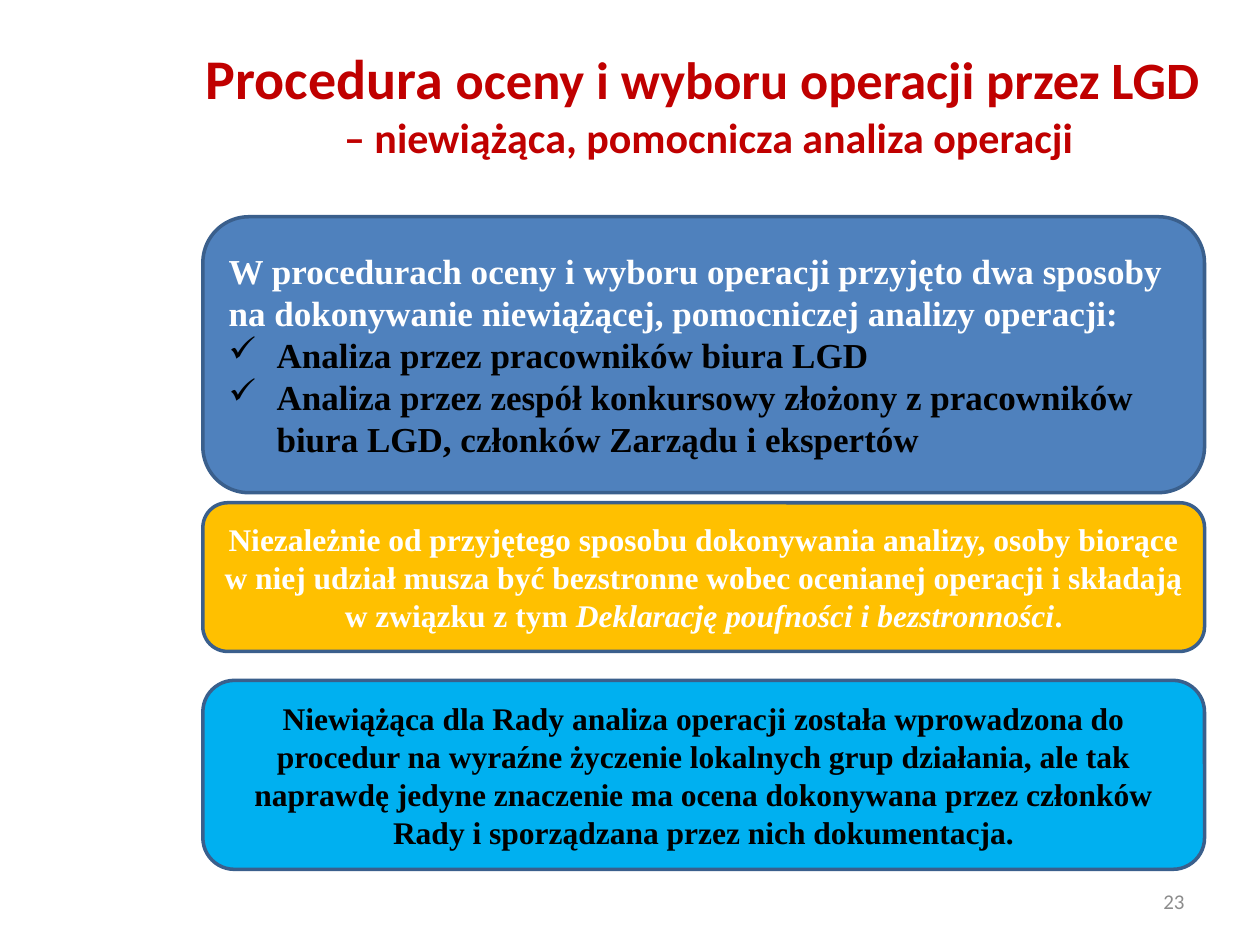
"""Build the slide on the non-binding, auxiliary analysis of operations."""
from lxml import etree
from pptx import Presentation
from pptx import util as u
from pptx.dml.color import RGBColor
from pptx.enum import shapes, text
from pptx.oxml.ns import qn


def rgb(value):
    return RGBColor.from_string(value)


def add_text(p, content, size=18, font="Times New Roman", color="000000",
             bold=True, italic=False, align=text.PP_ALIGN.CENTER, bullet=None):
    p.alignment = align
    if bullet:
        pPr = p._p.get_or_add_pPr()
        pPr.set("marL", str(u.Inches(0.38)))
        pPr.set("indent", str(u.Inches(-0.38)))
        etree.SubElement(pPr, qn("a:buChar")).set("char", bullet)
    r = p.add_run()
    r.text = content
    r.font.size = u.Pt(size)
    r.font.name = font
    r.font.bold = bold
    r.font.italic = italic
    r.font.color.rgb = rgb(color)


prs = Presentation()
prs.slide_width, prs.slide_height = u.Inches(10), u.Inches(7.5)
s = prs.slides.add_slide(prs.slide_layouts[6])

frames = []
for box in [(1.33, 0.08, 8.59, 1.47), (7.17, 6.95, 2.33, 0.4)]:
    tf = s.shapes.add_textbox(*map(u.Inches, box)).text_frame
    tf.word_wrap = True
    tf.vertical_anchor = text.MSO_ANCHOR.MIDDLE
    frames.append(tf)
title, number = frames

p = title.paragraphs[0]
heading = {"font": "Calibri", "color": "C00000"}
add_text(p, "Procedura ", size=32, **heading)
add_text(p, "oceny i wyboru operacji przez LGD ", size=30, **heading)
p.add_line_break()
add_text(p, "– niewiążąca, pomocnicza analiza operacji", size=24, **heading)

add_text(number.paragraphs[0], "23", size=12, font="Calibri", color="8C8C8C",
         bold=False, align=text.PP_ALIGN.RIGHT)

white = {"color": "FFFFFF"}
left = {"size": 20, "align": text.PP_ALIGN.LEFT}
check = {**left, "bullet": "✓"}
panels = [
    (1.72, 2.19, "4F81BD", [
        [("W procedurach oceny i wyboru operacji przyjęto dwa sposoby na "
          "dokonywanie niewiążącej, pomocniczej analizy operacji:", {**left, **white})],
        [("Analiza przez pracowników biura LGD", check)],
        [("Analiza przez zespół konkursowy złożony z pracowników biura LGD, "
          "członków Zarządu i ekspertów", check)],
    ]),
    (3.99, 1.18, "FFC000", [
        [("Niezależnie od przyjętego sposobu dokonywania analizy, osoby biorące "
          "w niej udział musza być bezstronne wobec ocenianej operacji i składają "
          "w związku z tym ", white),
         ("Deklarację poufności i bezstronności", {**white, "italic": True}),
         (".", white)],
    ]),
    (5.4, 1.5, "00B0F0", [
        [("Niewiążąca dla Rady analiza operacji została wprowadzona do procedur "
          "na wyraźne życzenie lokalnych grup działania, ale tak naprawdę jedyne "
          "znaczenie ma ocena dokonywana przez członków Rady i sporządzana przez "
          "nich dokumentacja.", {})],
    ]),
]
for top, height, fill, paragraphs in panels:
    sp = s.shapes.add_shape(shapes.MSO_SHAPE.ROUNDED_RECTANGLE, u.Inches(1.61),
                            u.Inches(top), u.Inches(7.95), u.Inches(height))
    sp.shadow.inherit = False
    sp.fill.solid()
    sp.fill.fore_color.rgb = rgb(fill)
    sp.line.color.rgb = rgb("3A5F8C")
    sp.line.width = u.Pt(2)
    tf = sp.text_frame
    tf.word_wrap = True
    tf.vertical_anchor = text.MSO_ANCHOR.MIDDLE
    for i, runs in enumerate(paragraphs):
        p = tf.add_paragraph() if i else tf.paragraphs[0]
        for content, style in runs:
            add_text(p, content, **style)

prs.save("out.pptx")
